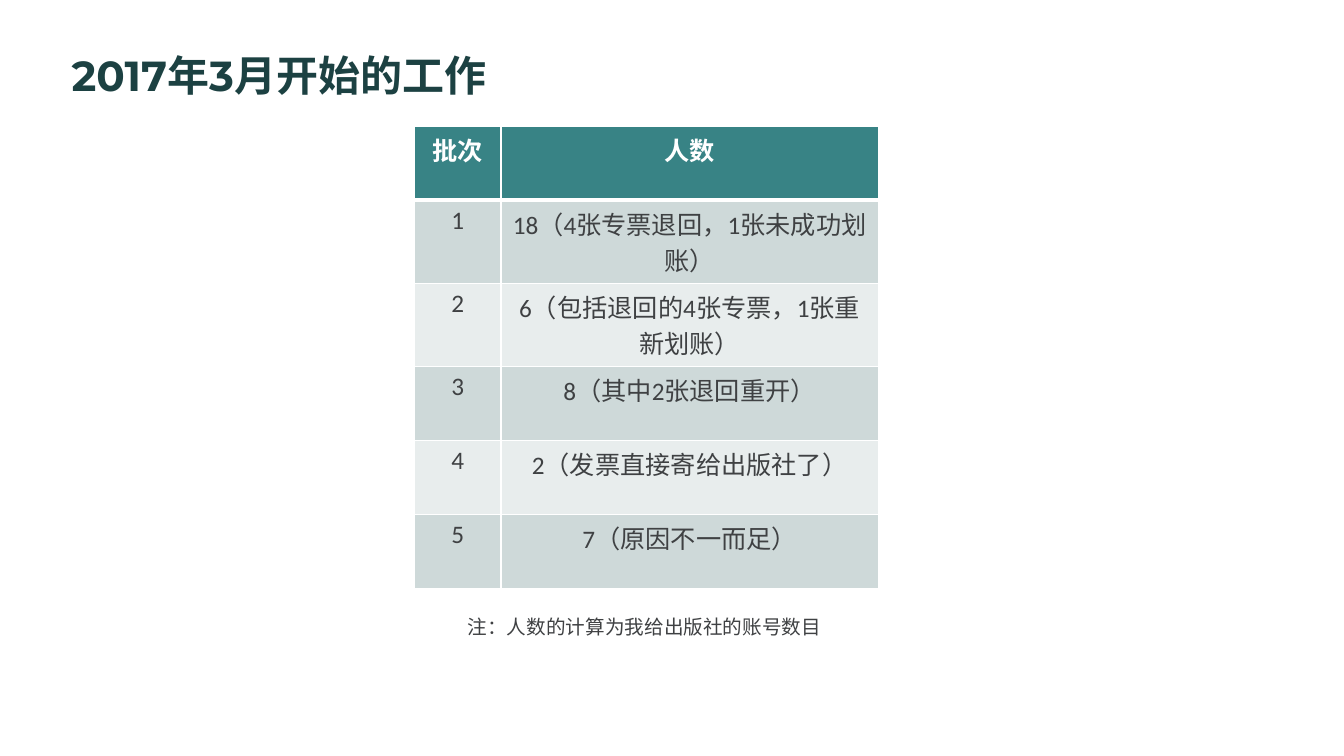
"""Build a slide with a table of work batches begun in March 2017."""
import pptx
import pptx.dml.color
import pptx.enum.text
import pptx.oxml
import pptx.oxml.ns
import pptx.util

Inches = pptx.util.Inches
Align = pptx.enum.text.PP_ALIGN
Anchor = pptx.enum.text.MSO_ANCHOR

theme = {
    "title": "1C4142", "head": "388385", "text": "3F4143", "white": "FFFFFF",
    "bands": ["CED9D9", "E8EDED"],
    "big": 30, "cell": 18, "note": 14,
}


def write(frame, text, size, font, color, bold=False, align=Align.LEFT, space=1.0):
    para = frame.paragraphs[0]
    para.text = text
    para.alignment = align
    para.line_spacing = space
    face = para.runs[0].font
    face.name, face.bold = font, bold
    face.size = pptx.util.Pt(size)
    face.color.rgb = pptx.dml.color.RGBColor.from_string(color)


def edge(cell, sides):
    props = cell._tc.get_or_add_tcPr()
    for spot, (side, width) in enumerate(sides.items()):
        props.insert(spot, pptx.oxml.parse_xml(
            f'<a:ln{side} {pptx.oxml.ns.nsdecls("a")} w="{pptx.util.Pt(width)}">'
            f'<a:solidFill><a:srgbClr val="{theme["white"]}"/></a:solidFill></a:ln{side}>'))


deck = pptx.Presentation()
deck.slide_width, deck.slide_height = Inches(13.33), Inches(7.5)
slide = deck.slides.add_slide(deck.slide_layouts[5])

title = slide.shapes.title
title.left, title.top = Inches(0.61), Inches(0.28)
title.width, title.height = Inches(12.09), Inches(0.77)
title.text_frame.vertical_anchor = Anchor.BOTTOM
write(title.text_frame, "2017年3月开始的工作", theme["big"], "Montserrat",
      theme["title"], bold=True, space=0.9)

rows = [
    ("批次", "人数"),
    ("1", "18（4张专票退回，1张未成功划账）"),
    ("2", "6（包括退回的4张专票，1张重新划账）"),
    ("3", "8（其中2张退回重开）"),
    ("4", "2（发票直接寄给出版社了）"),
    ("5", "7（原因不一而足）"),
]
table = slide.shapes.add_table(len(rows), 2, Inches(4.11), Inches(1.25),
                               Inches(4.6), Inches(4.41)).table
for col, width in zip(table.columns, (0.86, 3.74)):
    col.width = Inches(width)

for r, row in enumerate(rows):
    table.rows[r].height = Inches(0.735)
    head = r == 0
    fill = theme["head"] if head else theme["bands"][(r - 1) % 2]
    for c, text in enumerate(row):
        cell = table.cell(r, c)
        cell.fill.solid()
        cell.fill.fore_color.rgb = pptx.dml.color.RGBColor.from_string(fill)
        edge(cell, {"L": 1, "R": 1, "T": 3 if r == 1 else 1, "B": 3 if head else 1})
        write(cell.text_frame, text, theme["cell"], "Calibri",
              theme["white"] if head else theme["text"], bold=head, align=Align.CENTER)

note = slide.shapes.add_textbox(Inches(4.54), Inches(5.98), Inches(3.74), Inches(0.41))
note.text_frame.word_wrap = False
note.text_frame.auto_size = pptx.enum.text.MSO_AUTO_SIZE.SHAPE_TO_FIT_TEXT
write(note.text_frame, "注：人数的计算为我给出版社的账号数目", theme["note"], "Arial",
      theme["text"], space=1.3)

deck.save("out.pptx")
